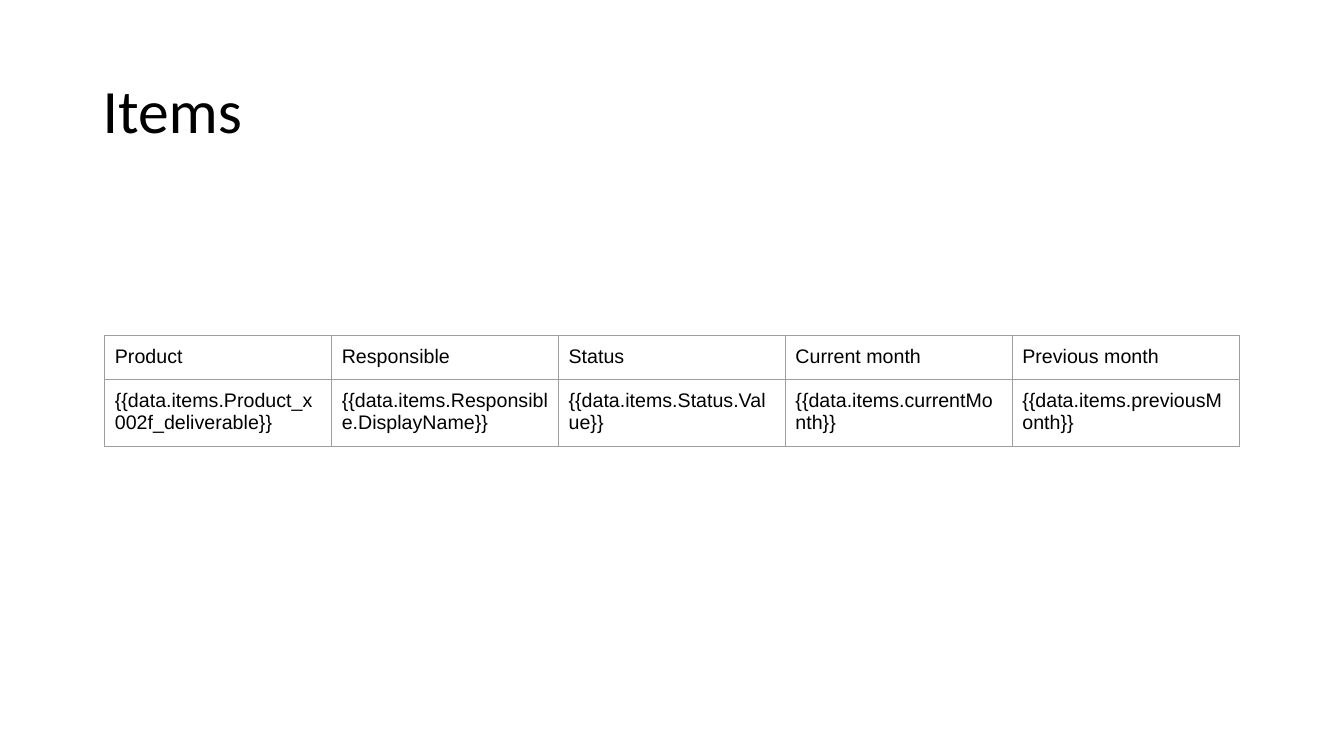
from lxml.etree import SubElement
from pptx import Presentation
from pptx.dml.color import RGBColor
from pptx.enum.text import MSO_ANCHOR as Anchor
from pptx.oxml.ns import qn
from pptx.util import Inches, Pt

WIDTH, HEIGHT = 13.33, 7.5
FIELDS = {
    "Product": "Product_x002f_deliverable",
    "Responsible": "Responsible.DisplayName",
    "Status": "Status.Value",
    "Current month": "currentMonth",
    "Previous month": "previousMonth",
}


def color(value):
    return RGBColor.from_string(value)


class SlideBuilder:
    """Draws styled elements on one slide, placed by percentages of its size."""

    ink, border = "000000", "9E9E9E"
    title_font, table_font = "Calibri", "Arial"

    def __init__(self, presentation):
        self.slide = presentation.slides.add_slide(presentation.slide_layouts[6])

    def place(self, left, top, width, height):
        across, down = WIDTH / 100, HEIGHT / 100
        return (Inches(left * across), Inches(top * down),
                Inches(width * across), Inches(height * down))

    def set_text(self, frame, text, font, size):
        frame.word_wrap = True
        paragraph = frame.paragraphs[0]
        paragraph.text = text
        paragraph.font.name = font
        paragraph.font.size = Pt(size)
        paragraph.font.color.rgb = color(self.ink)
        return paragraph

    def title(self, text, *box):
        frame = self.slide.shapes.add_textbox(*self.place(*box)).text_frame
        frame.vertical_anchor = Anchor.MIDDLE
        self.set_text(frame, text, self.title_font, 44).line_spacing = 0.9

    def outline(self, cell):
        properties = cell._tc.get_or_add_tcPr()
        for side in ("lnL", "lnR", "lnT", "lnB"):
            line = SubElement(properties, qn(f"a:{side}"), w=str(Pt(0.75)))
            fill = SubElement(line, qn("a:solidFill"))
            SubElement(fill, qn("a:srgbClr"), val=self.border)

    def table(self, rows, *box):
        shape = self.slide.shapes.add_table(len(rows), len(rows[0]), *self.place(*box))
        table = shape.table
        table.first_row = table.horz_banding = False
        for row, texts in zip(table.rows, rows):
            for cell, text in zip(row.cells, texts):
                cell.margin_left = cell.margin_right = Inches(0.1)
                cell.margin_top = cell.margin_bottom = Inches(0.1)
                self.outline(cell)
                cell.fill.background()
                self.set_text(cell.text_frame, text, self.table_font, 14)


def main():
    presentation = Presentation()
    presentation.slide_width = Inches(WIDTH)
    presentation.slide_height = Inches(HEIGHT)
    builder = SlideBuilder(presentation)
    builder.title("Items", 6.9, 5.3, 86.3, 19.3)
    placeholders = [f"{{{{data.items.{field}}}}}" for field in FIELDS.values()]
    builder.table([list(FIELDS), placeholders], 7.8, 44.4, 84.4, 11.2)
    presentation.save("out.pptx")


if __name__ == "__main__":
    main()
